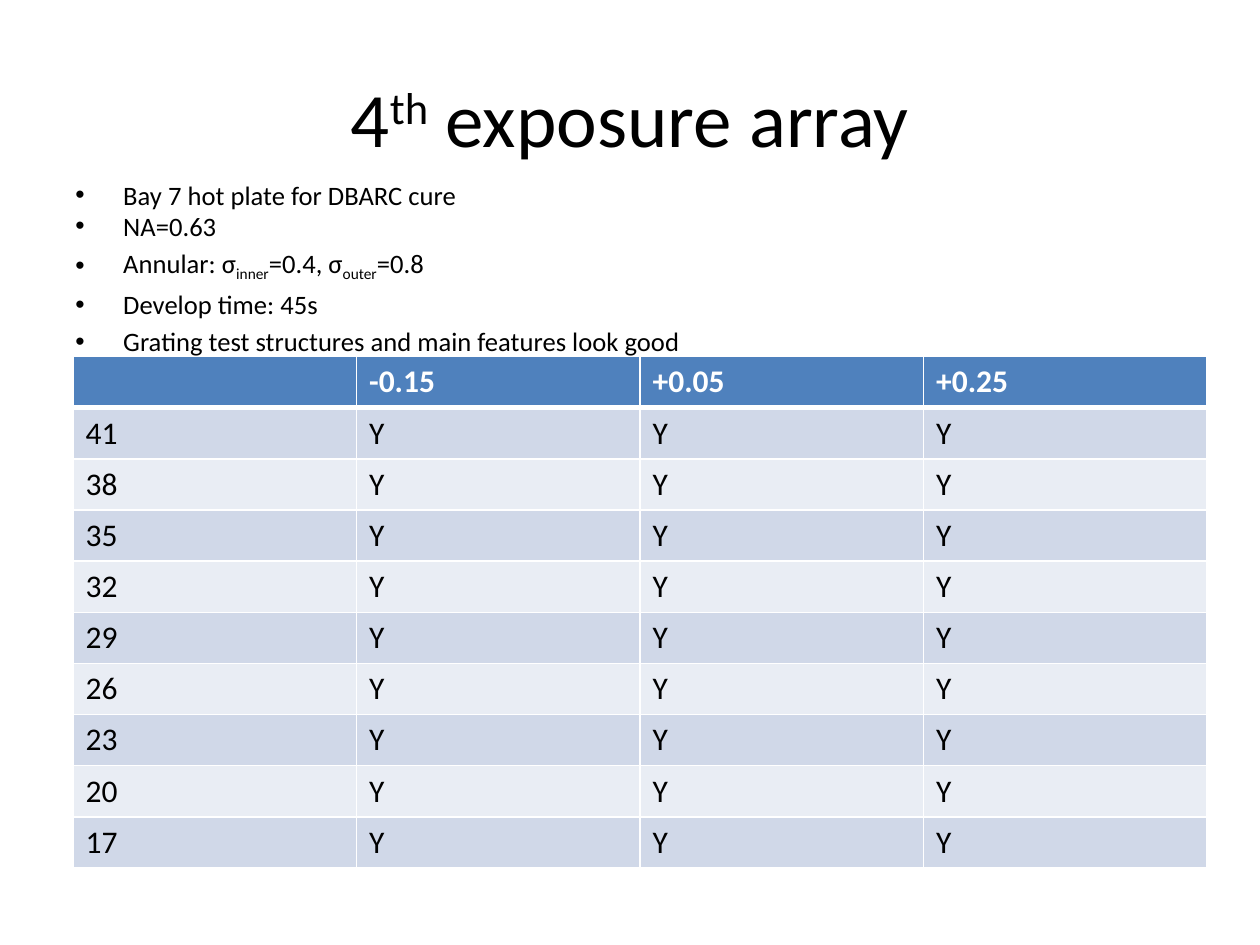
from lxml import etree
from pptx import Presentation
from pptx.dml.color import RGBColor
from pptx.enum.text import MSO_ANCHOR, PP_ALIGN
from pptx.oxml.ns import qn
from pptx.util import Inches, Pt

CENTER = PP_ALIGN.CENTER
LEFT = PP_ALIGN.LEFT
MIDDLE = MSO_ANCHOR.MIDDLE
TOP = MSO_ANCHOR.TOP

BLACK = RGBColor(0x00, 0x00, 0x00)
WHITE = RGBColor(0xFF, 0xFF, 0xFF)
HEADER_BLUE = RGBColor(0x4F, 0x81, 0xBD)
BANDS = (RGBColor(0xD0, 0xD8, 0xE8), RGBColor(0xE9, 0xED, 0xF4))

FONT = "Calibri"
SUPER = 30
SUB = -25

TITLE = [("4", 0), ("th", SUPER), (" exposure array", 0)]
CONDITIONS = [
    ([("Bay 7 hot plate for DBARC cure", 0)], 0.8),
    ([("NA=0.63", 0)], 0.8),
    ([("Annular: σ", 0), ("inner", SUB), ("=0.4, σ", 0),
      ("outer", SUB), ("=0.8", 0)], 1.0),
    ([("Develop time: 45s", 0)], 1.0),
    ([("Grating test structures and main features look good", 0)], 1.0),
]
FOCUS_OFFSETS = ["-0.15", "+0.05", "+0.25"]
DOSES = range(41, 16, -3)


def write_text(paragraph, pieces, size=18, color=BLACK, bold=False,
               align=LEFT, line_spacing=1.0, space_before=0):
    paragraph.alignment = align
    paragraph.line_spacing = line_spacing
    paragraph.space_before = Pt(space_before)
    for text, baseline in pieces:
        run = paragraph.add_run()
        run.text = text
        run.font.name = FONT
        run.font.size = Pt(size)
        run.font.bold = bold
        run.font.color.rgb = color
        if baseline:
            run.font._element.set("baseline", str(baseline * 1000))


def add_bullet(paragraph, indent):
    properties = paragraph._p.get_or_add_pPr()
    properties.set("marL", str(indent))
    properties.set("indent", str(-indent))
    bullet_font = etree.SubElement(properties, qn("a:buFont"))
    bullet_font.set("typeface", "Arial")
    etree.SubElement(properties, qn("a:buChar")).set("char", "•")


def add_text_frame(slide, left, top, width, height, anchor=TOP):
    box = slide.shapes.add_textbox(
        Inches(left), Inches(top), Inches(width), Inches(height))
    frame = box.text_frame
    frame.word_wrap = True
    frame.vertical_anchor = anchor
    return frame


def add_title(slide):
    frame = add_text_frame(slide, 0.5, 0.3, 9, 1.25, anchor=MIDDLE)
    write_text(frame.paragraphs[0], TITLE, size=44, align=CENTER)


def add_conditions(slide):
    frame = add_text_frame(slide, 0.5, 1.42, 9, 1.42)
    for index, (pieces, spacing) in enumerate(CONDITIONS):
        paragraph = frame.add_paragraph() if index else frame.paragraphs[0]
        write_text(paragraph, pieces, size=15.2, line_spacing=spacing,
                   space_before=3)
        add_bullet(paragraph, Inches(0.38))


def set_borders(cell, top=1, bottom=1):
    properties = cell._tc.get_or_add_tcPr()
    widths = {"a:lnL": 1, "a:lnR": 1, "a:lnT": top, "a:lnB": bottom}
    for tag, width in widths.items():
        line = etree.SubElement(properties, qn(tag))
        line.set("w", str(Pt(width)))
        fill = etree.SubElement(line, qn("a:solidFill"))
        etree.SubElement(fill, qn("a:srgbClr")).set("val", str(WHITE))


def add_exposure_table(slide):
    rows = [[""] + FOCUS_OFFSETS]
    rows += [[str(dose)] + ["Y"] * len(FOCUS_OFFSETS) for dose in DOSES]
    table = slide.shapes.add_table(
        len(rows), len(rows[0]), Inches(0.58), Inches(2.83),
        Inches(9), Inches(4.06)).table
    for row_index, values in enumerate(rows):
        is_header = row_index == 0
        for column_index, value in enumerate(values):
            cell = table.cell(row_index, column_index)
            set_borders(cell, top=3 if row_index == 1 else 1,
                        bottom=3 if is_header else 1)
            cell.fill.solid()
            cell.fill.fore_color.rgb = (
                HEADER_BLUE if is_header else BANDS[(row_index - 1) % 2])
            if value:
                write_text(cell.text_frame.paragraphs[0], [(value, 0)],
                           color=WHITE if is_header else BLACK,
                           bold=is_header)


def main():
    presentation = Presentation()
    presentation.slide_width = Inches(10)
    presentation.slide_height = Inches(7.5)
    slide = presentation.slides.add_slide(presentation.slide_layouts[6])
    add_title(slide)
    add_exposure_table(slide)
    add_conditions(slide)
    presentation.save("out.pptx")


if __name__ == "__main__":
    main()
